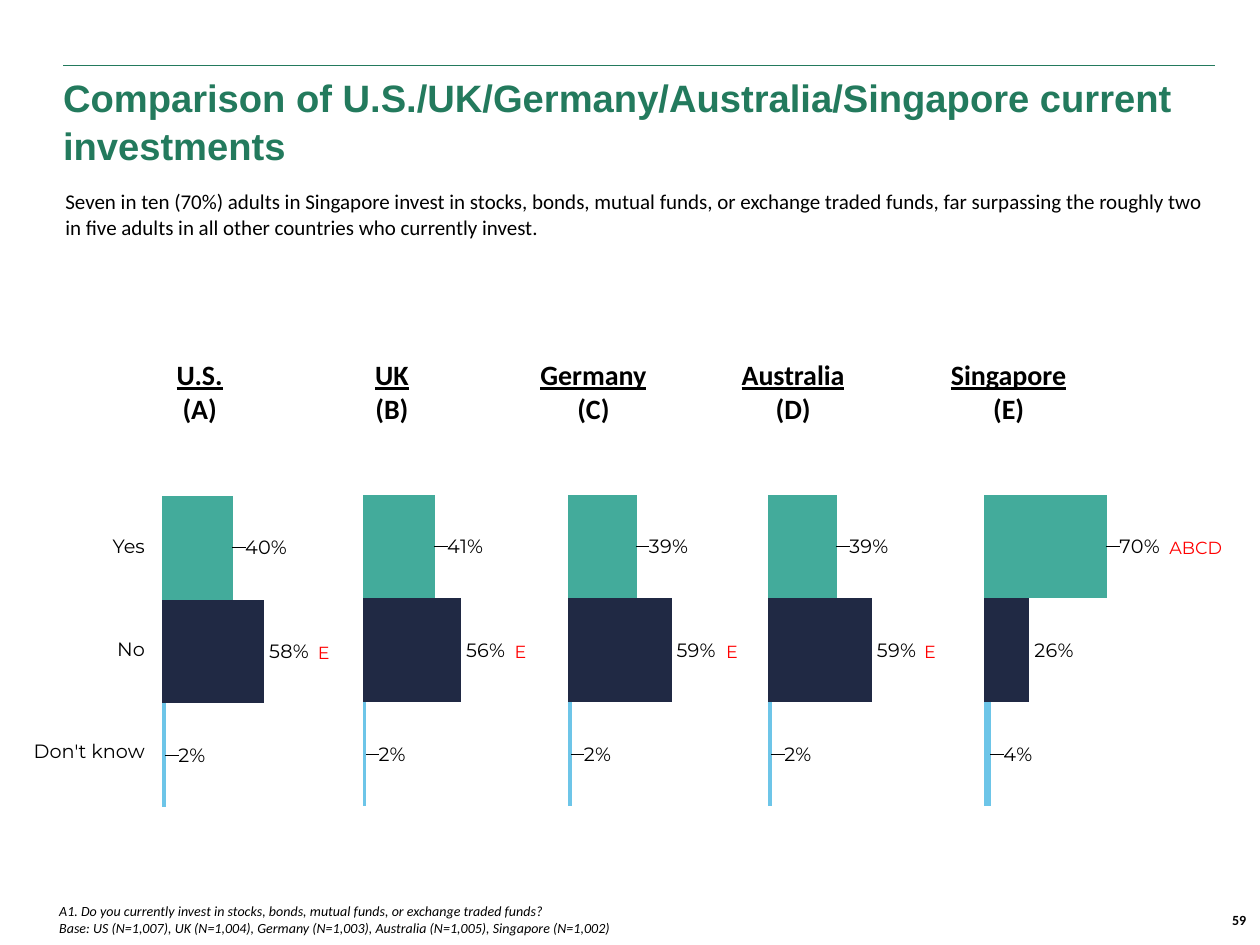
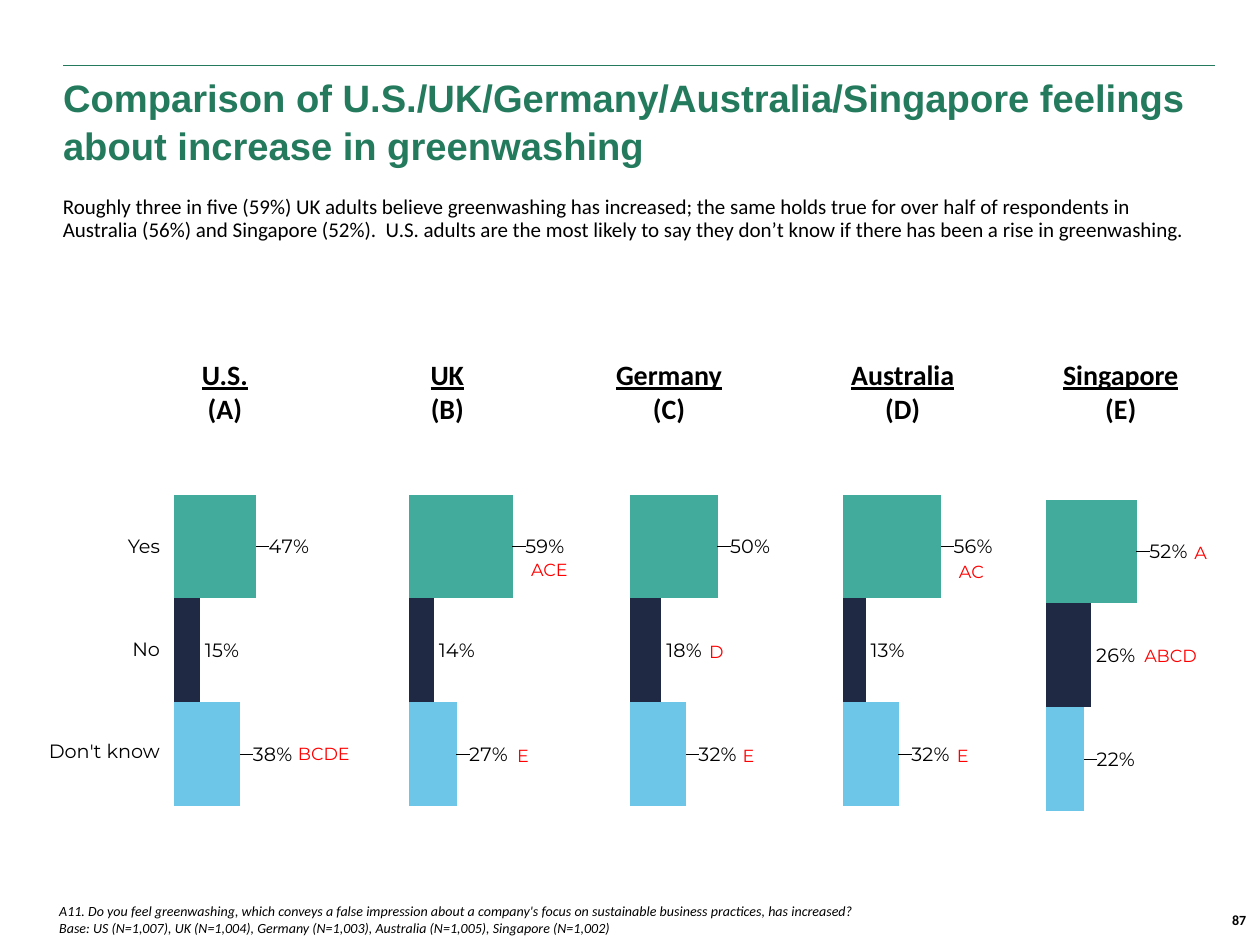
import pptx
import pptx.chart.data
import pptx.dml.color
import pptx.enum.chart
import pptx.enum.shapes
import pptx.enum.text
import pptx.oxml
import pptx.oxml.ns
import pptx.util

Inches = pptx.util.Inches
Align = pptx.enum.text.PP_ALIGN
Anchor = pptx.enum.text.MSO_ANCHOR

COLORS = {
    "green": "237A5D",
    "black": "000000",
    "mark": "FF0000",
    "Don't know": "6DC5E8",
    "No": "202944",
    "Yes": "43AB9B",
}
ANSWERS = ["Yes", "No", "Don't know"]
COUNTRIES = [("U.S.", 0.57), ("UK", 0.48), ("Germany", 1.06), ("Australia", 1.03), ("Singapore", 1.13)]
MARK_WIDTHS = {1: 0.3, 2: 0.4, 3: 0.5, 4: 0.62}
BASE = "Base: US (N=1,007), UK (N=1,004), Germany (N=1,003), Australia (N=1,005), Singapore (N=1,002)"

COMPARISONS = [
    {
        "title": "Comparison of U.S./UK/Germany/Australia/Singapore current investments",
        "finding": "Seven in ten (70%) adults in Singapore invest in stocks, bonds, mutual funds, or exchange "
                   "traded funds, far surpassing the roughly two in five adults in all other countries who "
                   "currently invest.",
        "finding_box": (0.42, 1.45, 9.25, 0.5),
        "finding_spacing": 1.0,
        "question": "A1. Do you currently invest in stocks, bonds, mutual funds, or exchange traded funds?",
        "number": "59",
        "answers_left": -0.64,
        "headings": [1.3, 2.87, 4.18, 5.78, 7.44],
        "charts": [(1.19, 3.38), (2.78, 3.37), (4.41, 3.37), (6, 3.37), (7.71, 3.37)],
        "shares": [(0.4, 0.58, 0.02), (0.41, 0.56, 0.02), (0.39, 0.59, 0.02), (0.39, 0.59, 0.02),
                   (0.7, 0.26, 0.04)],
        "marks": [("E", 2.42, 5.05), ("E", 3.98, 5.04), ("E", 5.66, 5.04), ("E", 7.23, 5.04),
                  ("ABCD", 9.18, 4.21)],
    },
    {
        "title": "Comparison of U.S./UK/Germany/Australia/Singapore feelings about increase in greenwashing",
        "finding": "Roughly three in five (59%) UK adults believe greenwashing has increased; the same holds "
                   "true for over half of respondents in Australia (56%) and Singapore (52%).  U.S. adults are "
                   "the most likely to say they don’t know if there has been a rise in greenwashing.",
        "finding_box": (0.4, 1.51, 9.18, 0.56),
        "finding_spacing": 0.9,
        "question": "A11. Do you feel greenwashing, which conveys a false impression about a company's focus on "
                    "sustainable business practices, has increased?",
        "number": "87",
        "answers_left": -0.52,
        "headings": [1.5, 3.31, 4.78, 6.65, 8.33],
        "charts": [(1.28, 3.37), (3.15, 3.37), (4.9, 3.37), (6.59, 3.37), (8.2, 3.41)],
        "shares": [(0.47, 0.15, 0.38), (0.59, 0.14, 0.27), (0.5, 0.18, 0.32), (0.56, 0.13, 0.32),
                   (0.52, 0.26, 0.22)],
        "marks": [("BCDE", 2.26, 5.85), ("ACE", 4.11, 4.39), ("E", 4, 5.86), ("E", 5.79, 5.86),
                  ("E", 7.49, 5.86), ("D", 5.53, 5.04), ("AC", 7.51, 4.4), ("A", 9.38, 4.25),
                  ("ABCD", 8.98, 5.07)],
    },
]


def write(paragraph, text, size=12, font="Calibri", color="black", bold=False, italic=False,
          underline=False, align=Align.LEFT, spacing=None):
    paragraph.alignment = align
    if spacing:
        paragraph.line_spacing = spacing
    run = paragraph.add_run()
    run.text = text
    run.font.size = pptx.util.Pt(size)
    run.font.name = font
    run.font.bold = bold
    run.font.italic = italic
    run.font.underline = underline
    run.font.color.rgb = pptx.dml.color.RGBColor.from_string(COLORS[color])


def set_margins(target, left, top, right, bottom):
    target.margin_left, target.margin_top = Inches(left), Inches(top)
    target.margin_right, target.margin_bottom = Inches(right), Inches(bottom)


def add_layout(parent, index, inner=False, **measures):
    for old in parent.findall(pptx.oxml.ns.qn("c:layout")):
        parent.remove(old)
    values = "".join(f'<c:{key} val="{value}"/>' for key, value in measures.items())
    modes = '<c:layoutTarget val="inner"/><c:xMode val="edge"/><c:yMode val="edge"/>' if inner else ""
    parent.insert(index, pptx.oxml.parse_xml(
        f'<c:layout {pptx.oxml.ns.nsdecls("c")}><c:manualLayout>{modes}{values}</c:manualLayout></c:layout>'))


class Deck:
    def __init__(self):
        self.presentation = pptx.Presentation()
        self.presentation.slide_width = Inches(10)
        self.presentation.slide_height = Inches(7.5)
        self.slide = None

    def start(self, title):
        self.slide = self.presentation.slides.add_slide(self.presentation.slide_layouts[5])
        self.rule()
        heading = self.slide.shapes.title
        heading.left, heading.top = Inches(0.4), Inches(0.52)
        heading.width, heading.height = Inches(9.44), Inches(0.83)
        frame = heading.text_frame
        frame.vertical_anchor = Anchor.TOP
        frame.auto_size = pptx.enum.text.MSO_AUTO_SIZE.NONE
        write(frame.paragraphs[0], title, size=21.8, font="Arial", color="green", bold=True, spacing=1.05)

    def rule(self):
        line = self.slide.shapes.add_connector(
            pptx.enum.shapes.MSO_CONNECTOR.STRAIGHT, Inches(0.5), Inches(0.52), Inches(9.64), Inches(0.52))
        line.line.color.rgb = pptx.dml.color.RGBColor.from_string(COLORS["green"])
        line.line.width = pptx.util.Pt(0.5)
        line._element.spPr.append(pptx.oxml.parse_xml(f'<a:effectLst {pptx.oxml.ns.nsdecls("a")}/>'))

    def box(self, left, top, width, height, wrap=True, anchor=Anchor.TOP):
        frame = self.slide.shapes.add_textbox(
            Inches(left), Inches(top), Inches(width), Inches(height)).text_frame
        frame.word_wrap = wrap
        frame.vertical_anchor = anchor
        return frame

    def text(self, text, box, wrap=True, anchor=Anchor.TOP, **style):
        write(self.box(*box, wrap=wrap, anchor=anchor).paragraphs[0], text, **style)

    def footer(self, question, number):
        self.text(number, (7.8, 7.1, 2.19, 0.4), anchor=Anchor.MIDDLE, size=8, bold=True, align=Align.RIGHT)
        notes = self.box(0.42, 7.05, 8.06, 0.43, anchor=Anchor.BOTTOM)
        set_margins(notes, 0.05, 0.05, 0.05, 0.05)
        write(notes.paragraphs[0], question, size=8, italic=True)
        write(notes.add_paragraph(), BASE, size=8, italic=True)

    def country(self, name, letter, left, width):
        paragraph = self.box(left, 2.79, width, 0.64, wrap=False).paragraphs[0]
        write(paragraph, name, size=16, bold=True, underline=True, align=Align.CENTER)
        paragraph.add_line_break()
        write(paragraph, f"({letter})", size=16, bold=True, align=Align.CENTER)

    def answers(self, left):
        table = self.slide.shapes.add_table(
            len(ANSWERS), 1, Inches(left), Inches(3.93), Inches(1.8), Inches(2.44)).table
        table.first_row = table.horz_banding = False
        for row, answer in enumerate(ANSWERS):
            cell = table.cell(row, 0)
            cell.fill.background()
            cell.vertical_anchor = Anchor.MIDDLE
            set_margins(cell, 0.01, 0.01, 0.01, 0)
            write(cell.text_frame.paragraphs[0], answer, size=11, font="Montserrat", align=Align.RIGHT)

    def chart(self, left, top, shares):
        data = pptx.chart.data.CategoryChartData(number_format="0%")
        data.categories = ["1"]
        for number, share in enumerate(reversed(shares), 1):
            data.add_series(f"Series {number}", [share])
        chart = self.slide.shapes.add_chart(
            pptx.enum.chart.XL_CHART_TYPE.BAR_CLUSTERED, Inches(left), Inches(top),
            Inches(2.98), Inches(3.62), data).chart
        chart.has_title = chart.has_legend = False
        chart.font.size = pptx.util.Pt(11)
        chart.font.name = "Montserrat"
        chart.font.color.rgb = pptx.dml.color.RGBColor.from_string(COLORS["black"])
        chart.value_axis.minimum_scale, chart.value_axis.maximum_scale = 0, 1
        chart.value_axis.has_major_gridlines = False
        chart.value_axis.visible = chart.category_axis.visible = False
        plot = chart.plots[0]
        plot.gap_width = 82
        plot.vary_by_categories = False
        outside = pptx.enum.chart.XL_LABEL_POSITION.OUTSIDE_END
        for answer, series in zip(reversed(ANSWERS), plot.series):
            series.format.fill.solid()
            series.format.fill.fore_color.rgb = pptx.dml.color.RGBColor.from_string(COLORS[answer])
            labels = series.data_labels
            labels.show_value = True
            labels.number_format = "0%"
            labels.number_format_is_linked = False
            labels.position = outside
            if answer != "No":
                series.points[0].data_label.position = outside
        for label in chart._chartSpace.xpath(".//c:dLbl"):
            add_layout(label, 1, x=0.02, y=0)
        add_layout(chart._chartSpace.xpath(".//c:plotArea")[0], 0, inner=True, x=0.033, y=0.06, w=0.468, h=0.87)

    def mark(self, letters, left, top):
        self.text(letters, (left, top, MARK_WIDTHS[len(letters)], 0.27), wrap=False,
                  size=10, font="Montserrat", color="mark", align=Align.CENTER)


def main():
    deck = Deck()
    for content in COMPARISONS:
        deck.start(content["title"])
        deck.text(content["finding"], content["finding_box"], spacing=content["finding_spacing"])
        deck.footer(content["question"], content["number"])
        deck.answers(content["answers_left"])
        for place, shares in zip(content["charts"], content["shares"]):
            deck.chart(*place, shares)
        for (name, width), letter, left in zip(COUNTRIES, "ABCDE", content["headings"]):
            deck.country(name, letter, left, width)
        for mark in content["marks"]:
            deck.mark(*mark)
    deck.presentation.save("out.pptx")


if __name__ == "__main__":
    main()
